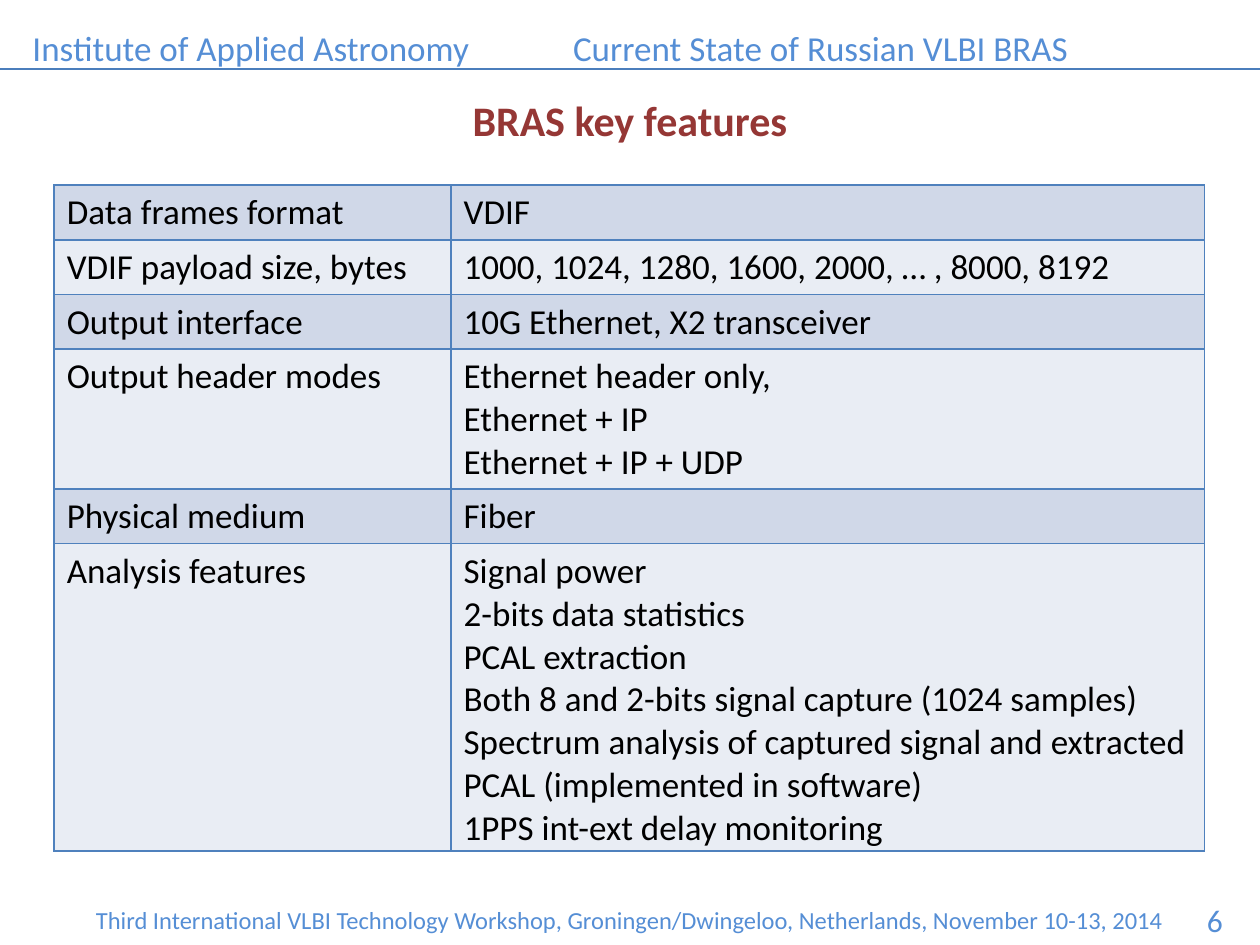
from dataclasses import dataclass

from lxml import etree
from pptx import Presentation
from pptx import util as u
from pptx.dml.color import RGBColor
from pptx.enum import shapes, text
from pptx.oxml import ns

FONT = "Calibri"
HUES = {
    "rule": "4B7EBC",
    "head": "558ED5",
    "title": "953735",
    "ink": "000000",
    "edge": "4F81BD",
    "dark": "D0D8E8",
    "light": "E9EDF4",
}


@dataclass
class Label:
    words: str
    left: float
    top: float
    width: float
    height: float
    size: int
    hue: str = "head"
    bold: bool = False
    center: bool = False
    wrap: bool = True
    grow: bool = True


@dataclass
class Row:
    name: str
    lines: list[str]
    height: float = 0.43


LABELS = [
    Label("Institute of Applied Astronomy", 0.16, 0.16, 3.7, 0.44, 20, wrap=False),
    Label("Third International VLBI Technology Workshop, Groningen/Dwingeloo, "
          "Netherlands, November 10-13, 2014", 0, 7.13, 10, 0.34, 14, center=True),
    Label("Current State of Russian VLBI BRAS", 4.45, 0.16, 4.17, 0.44, 20, wrap=False),
    Label("6", 9.48, 7.1, 0.52, 0.4, 18, grow=False),
    Label("BRAS key features", 0, 0.7, 10, 0.5, 24, "title", bold=True, center=True),
]

ROWS = [
    Row("Data frames format", ["VDIF"]),
    Row("VDIF payload size, bytes", ["1000, 1024, 1280, 1600, 2000, … , 8000, 8192"]),
    Row("Output interface", ["10G Ethernet, X2 transceiver"]),
    Row("Output header modes",
        ["Ethernet header only,", "Ethernet + IP", "Ethernet + IP + UDP"], 1.11),
    Row("Physical medium", ["Fiber"]),
    Row("Analysis features", [
        "Signal power",
        "2-bits data statistics",
        "PCAL extraction",
        "Both 8 and 2-bits signal capture (1024 samples)",
        "Spectrum analysis of captured signal and extracted PCAL (implemented in software)",
        "1PPS int-ext delay monitoring",
    ], 2.44),
]
COLS = [3.15, 5.98]


def color(hue: str) -> RGBColor:
    return RGBColor.from_string(HUES[hue])


def add_run(para, words: str, size: int, hue: str, bold: bool = False) -> None:
    run = para.add_run()
    run.text = words
    run.font.name = FONT
    run.font.size = u.Pt(size)
    run.font.bold = bold
    run.font.color.rgb = color(hue)


def add_label(slide, label: Label) -> None:
    box = slide.shapes.add_textbox(u.Inches(label.left), u.Inches(label.top),
                                   u.Inches(label.width), u.Inches(label.height))
    frame = box.text_frame
    frame.word_wrap = label.wrap
    fit = text.MSO_AUTO_SIZE
    frame.auto_size = fit.SHAPE_TO_FIT_TEXT if label.grow else fit.NONE
    para = frame.paragraphs[0]
    para.alignment = text.PP_ALIGN.CENTER if label.center else text.PP_ALIGN.LEFT
    add_run(para, label.words, label.size, label.hue, label.bold)


def add_rule(slide, top: float) -> None:
    rule = slide.shapes.add_connector(shapes.MSO_CONNECTOR.STRAIGHT, 0, u.Inches(top),
                                      u.Inches(10), u.Inches(top))
    rule.line.color.rgb = color("rule")
    rule.line.width = u.Pt(1.25)
    etree.SubElement(rule._element.spPr, ns.qn("a:effectLst"))


def add_edges(cell) -> None:
    props = cell._tc.get_or_add_tcPr()
    for spot, side in enumerate(("lnL", "lnR", "lnT", "lnB")):
        line = etree.Element(ns.qn(f"a:{side}"), w=str(u.Pt(1)))
        fill = etree.SubElement(line, ns.qn("a:solidFill"))
        etree.SubElement(fill, ns.qn("a:srgbClr"), val=HUES["edge"])
        props.insert(spot, line)


def fill_cell(cell, lines: list[str], hue: str) -> None:
    cell.fill.solid()
    cell.fill.fore_color.rgb = color(hue)
    add_edges(cell)
    frame = cell.text_frame
    for i, words in enumerate(lines):
        para = frame.add_paragraph() if i else frame.paragraphs[0]
        add_run(para, words, 20, "ink")


def add_grid(slide, left: float, top: float) -> None:
    high = sum(row.height for row in ROWS)
    grid = slide.shapes.add_table(len(ROWS), len(COLS), u.Inches(left), u.Inches(top),
                                  u.Inches(sum(COLS)), u.Inches(high)).table
    grid.first_row = False
    grid.horz_banding = False
    for col, width in zip(grid.columns, COLS):
        col.width = u.Inches(width)
    for i, row in enumerate(ROWS):
        grid.rows[i].height = u.Inches(row.height)
        hue = "light" if i % 2 else "dark"
        fill_cell(grid.cell(i, 0), [row.name], hue)
        fill_cell(grid.cell(i, 1), row.lines, hue)


def main() -> None:
    deck = Presentation()
    deck.slide_width, deck.slide_height = u.Inches(10), u.Inches(7.5)
    slide = deck.slides.add_slide(deck.slide_layouts[6])

    # Header rule, header, footer and title
    add_rule(slide, 0.55)
    for label in LABELS:
        add_label(slide, label)

    # Feature table
    add_grid(slide, 0.43, 1.47)

    deck.save("out.pptx")


if __name__ == "__main__":
    main()
